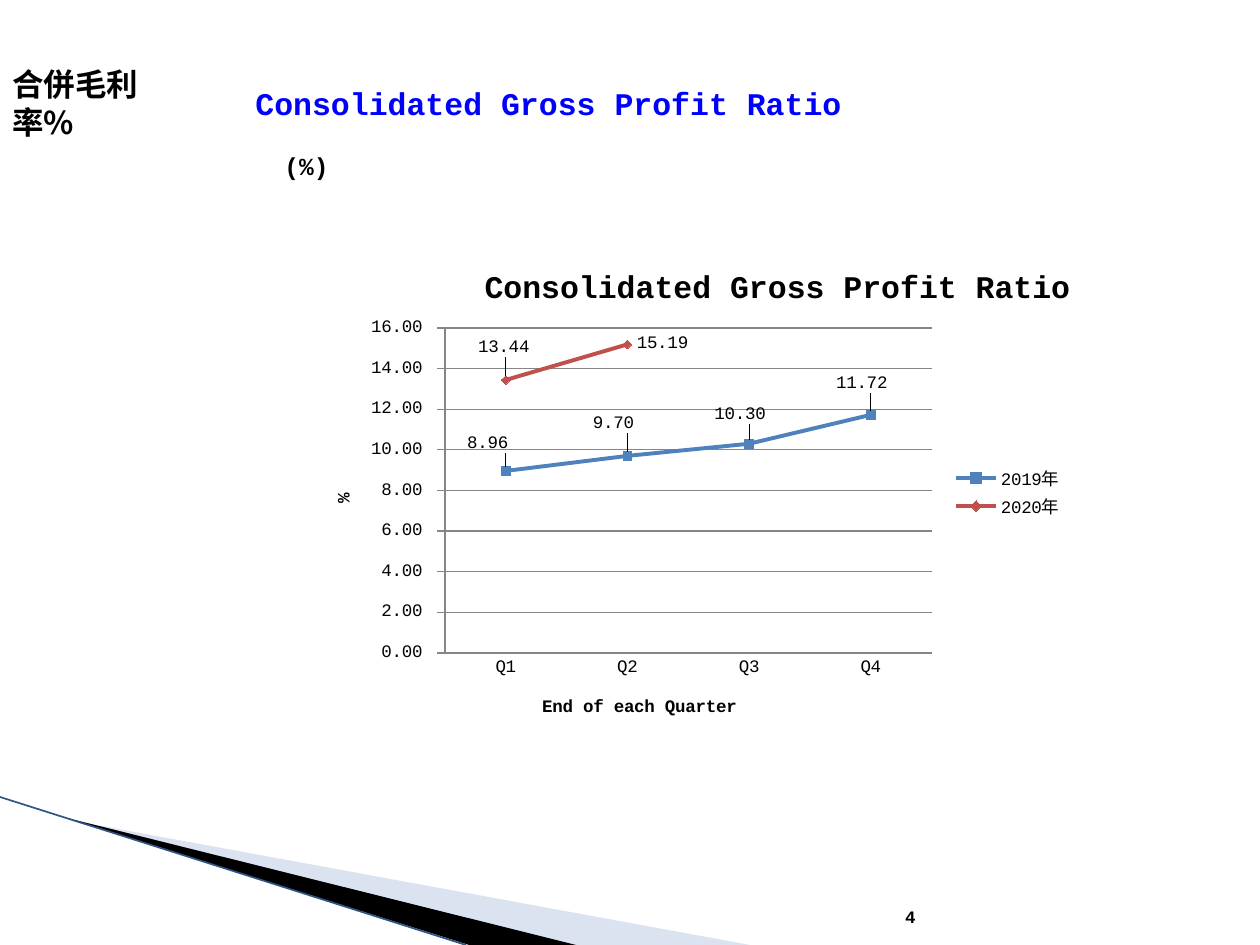
from dataclasses import dataclass

import pptx
import pptx.chart.data
import pptx.dml.color
import pptx.enum.chart
import pptx.enum.dml
import pptx.enum.shapes
import pptx.enum.text
import pptx.oxml
import pptx.oxml.ns
import pptx.util
from pptx.oxml.ns import qn

PX = 914400 / 126
ALIGN = pptx.enum.text.PP_ALIGN
ANCHOR = pptx.enum.text.MSO_ANCHOR
MARKER = pptx.enum.chart.XL_MARKER_STYLE
TICK = pptx.enum.chart.XL_TICK_MARK


@dataclass(frozen=True)
class Theme:
    font: str = "Courier New"
    cjk: str = "Noto Sans CJK SC"
    ink: str = "000000"
    heading: str = "0000FF"
    wedge: str = "A7B9DB"
    edge: str = "2F5485"
    grid: str = "868686"
    big: int = 18
    medium: int = 14
    small: int = 10


@dataclass(frozen=True)
class Box:
    left: int
    top: int
    width: int
    height: int

    def emu(self) -> tuple:
        return tuple(px(v) for v in (self.left, self.top, self.width, self.height))


@dataclass(frozen=True)
class Label:
    box: Box
    runs: tuple  # (text, font) pairs
    size: int
    color: str
    align: ALIGN = ALIGN.LEFT
    anchor: ANCHOR = ANCHOR.MIDDLE


@dataclass(frozen=True)
class Wedge:
    points: tuple
    color: str
    alpha: int = 100


@dataclass(frozen=True)
class Series:
    name: str
    values: tuple
    color: str
    marker: MARKER
    nudges: tuple  # px shift of each label from its place above the point


T = Theme()
CHART = Box(302, 244, 774, 495)
PLOT = Box(445, 328, 487, 325)
LEGEND = Box(950, 462, 116, 60)
TITLE_AT, X_TITLE_AT, Y_TITLE_AT = (479, 263), (539, 693), (330, 490)
NUMBER_FORMAT = "0.00_ "

WEDGES = (
    Wedge(((69, 820), (750, 945), (575, 945), (69, 819)), T.wedge, 40),
    Wedge(((67, 818), (576, 945), (469, 945), (68, 819)), T.ink),
)
LABELS = (
    Label(Box(604, 883, 324, 50), (("4", T.font),), T.small, T.ink,
          ALIGN.RIGHT, ANCHOR.BOTTOM),
    Label(Box(243, 76, 883, 54), (("Consolidated Gross Profit Ratio", T.font),),
          T.big, T.heading),
    Label(Box(0, 78, 200, 50), (("合併", T.font), ("毛利率%", T.cjk)), T.big, T.ink),
    Label(Box(272, 145, 963, 42), (("(%)", T.font),), T.medium, T.ink),
)
QUARTERS = ("Q1", "Q2", "Q3", "Q4")
SERIES = (
    Series("2019年", (8.96, 9.70, 10.30, 11.72), "4F81BD", MARKER.SQUARE,
           ((-13, -8), (-9, -13), (-4, -10), (-4, -12))),
    Series("2020年", (13.44, 15.19, None, None), "C0504D", MARKER.DIAMOND,
           ((3, -13),)),
)


def px(n: float) -> int:
    return round(n * PX)


def rgb(color: str) -> pptx.dml.color.RGBColor:
    return pptx.dml.color.RGBColor.from_string(color)


def style(font, size: int, color: str, bold: bool, name: str = T.font) -> None:
    font.name, font.bold, font.size = name, bold, pptx.util.Pt(size)
    font.color.rgb = rgb(color)


def add_label(slide, label: Label) -> None:
    tf = slide.shapes.add_textbox(*label.box.emu()).text_frame
    tf.word_wrap = True
    tf.vertical_anchor = label.anchor
    p = tf.paragraphs[0]
    p.alignment = label.align
    for text, name in label.runs:
        r = p.add_run()
        r.text = text
        style(r.font, label.size, label.color, True, name)
        ea = pptx.oxml.parse_xml(
            f'<a:ea {pptx.oxml.ns.nsdecls("a")} typeface="{T.cjk}"/>')
        r.font._element.find(qn("a:latin")).addnext(ea)


def add_wedge(slide, wedge: Wedge) -> None:
    start, *rest = wedge.points
    builder = slide.shapes.build_freeform(*start, scale=PX)
    builder.add_line_segments(rest, close=True)
    sp = builder.convert_to_shape()
    sp.shadow.inherit = False
    sp.fill.solid()
    sp.fill.fore_color.rgb = rgb(wedge.color)
    sp.line.fill.background()
    if wedge.alpha < 100:
        clr = sp._element.spPr.find(qn("a:solidFill")).find(qn("a:srgbClr"))
        clr.append(pptx.oxml.parse_xml(
            f'<a:alpha {pptx.oxml.ns.nsdecls("a")} val="{wedge.alpha * 1000}"/>'))


def add_edge(slide) -> None:
    line = slide.shapes.add_connector(
        pptx.enum.shapes.MSO_CONNECTOR.STRAIGHT, 0, px(797), px(466), px(945))
    line.line.color.rgb = rgb(T.edge)
    line.line.width = pptx.util.Pt(0.95)
    line._element.spPr.append(
        pptx.oxml.parse_xml(f'<a:effectLst {pptx.oxml.ns.nsdecls("a")}/>'))


def place(element, after: str | None, **values) -> None:
    """Give a chart part a manual layout, after the named child or first."""
    for old in element.findall(qn("c:layout")):
        element.remove(old)
    items = "".join(f'<c:{k} val="{v}"/>' for k, v in values.items())
    layout = pptx.oxml.parse_xml(
        f'<c:layout {pptx.oxml.ns.nsdecls("c")}><c:manualLayout>{items}'
        "</c:manualLayout></c:layout>")
    if after is None:
        element.insert(0, layout)
    else:
        element.find(qn(after)).addnext(layout)


def corner(left: int, top: int) -> dict:
    return dict(xMode="edge", yMode="edge",
                x=round((left - CHART.left) / CHART.width, 4),
                y=round((top - CHART.top) / CHART.height, 4))


def extent(box: Box) -> dict:
    return dict(corner(box.left, box.top), w=round(box.width / CHART.width, 4),
                h=round(box.height / CHART.height, 4))


def set_title(owner, text: str, size: int, at: tuple) -> None:
    """Title a chart or an axis, with its top left corner at the given point."""
    title = owner.chart_title if hasattr(owner, "chart_title") else owner.axis_title
    r = title.text_frame.paragraphs[0].add_run()
    r.text = text
    style(r.font, size, T.ink, True)
    place(title._element, "c:tx", **corner(*at))


def style_series(line, data: Series) -> None:
    line.smooth = False
    line.format.line.color.rgb = rgb(data.color)
    line.format.line.width = pptx.util.Pt(2.25)
    line.marker.style, line.marker.size = data.marker, 5
    line.marker.format.fill.solid()
    line.marker.format.fill.fore_color.rgb = rgb(data.color)
    line.marker.format.line.color.rgb = rgb(data.color)
    labels = line.data_labels
    labels.show_value = True
    labels.number_format, labels.number_format_is_linked = NUMBER_FORMAT, False
    for i, (dx, dy) in enumerate(data.nudges):
        line.points[i].data_label.position = pptx.enum.chart.XL_LABEL_POSITION.ABOVE
        place(labels._element.findall(qn("c:dLbl"))[i], "c:idx",
              x=round(dx / CHART.width, 4), y=round(dy / CHART.height, 4))


def add_ratio_chart(slide) -> None:
    data = pptx.chart.data.CategoryChartData(number_format=NUMBER_FORMAT)
    data.categories = QUARTERS
    for s in SERIES:
        data.add_series(s.name, s.values)
    chart = slide.shapes.add_chart(
        pptx.enum.chart.XL_CHART_TYPE.LINE_MARKERS, *CHART.emu(), data).chart
    style(chart.font, T.small, T.ink, False)
    chart.plots[0].vary_by_categories = False
    set_title(chart, "Consolidated Gross Profit Ratio", T.big, TITLE_AT)

    cat, val = chart.category_axis, chart.value_axis
    set_title(cat, "End of each Quarter", T.small, X_TITLE_AT)
    set_title(val, "%", T.small, Y_TITLE_AT)
    cat.major_tick_mark, val.major_tick_mark = TICK.NONE, TICK.OUTSIDE
    val.minimum_scale, val.maximum_scale, val.major_unit = 0, 16, 2
    val.tick_labels.number_format = NUMBER_FORMAT
    val.tick_labels.number_format_is_linked = False
    val.has_major_gridlines = True
    for part in (cat, val, val.major_gridlines):
        part.format.line.color.rgb = rgb(T.grid)
        part.format.line.width = pptx.util.Pt(0.75)

    chart.has_legend = True
    chart.legend.position = pptx.enum.chart.XL_LEGEND_POSITION.RIGHT
    chart.legend.include_in_layout = False
    place(chart.legend._element, "c:legendPos", **extent(LEGEND))
    plot_area = chart._chartSpace.chart.plotArea
    place(plot_area, None, layoutTarget="inner", **extent(PLOT))
    for line, s in zip(chart.plots[0].series, SERIES):
        style_series(line, s)


def main() -> None:
    prs = pptx.Presentation()
    prs.slide_width, prs.slide_height = px(1260), px(945)
    slide = prs.slides.add_slide(prs.slide_layouts[6])
    for wedge in WEDGES:
        add_wedge(slide, wedge)
    add_edge(slide)
    for label in LABELS:
        add_label(slide, label)
    add_ratio_chart(slide)
    prs.save("out.pptx")


if __name__ == "__main__":
    main()
